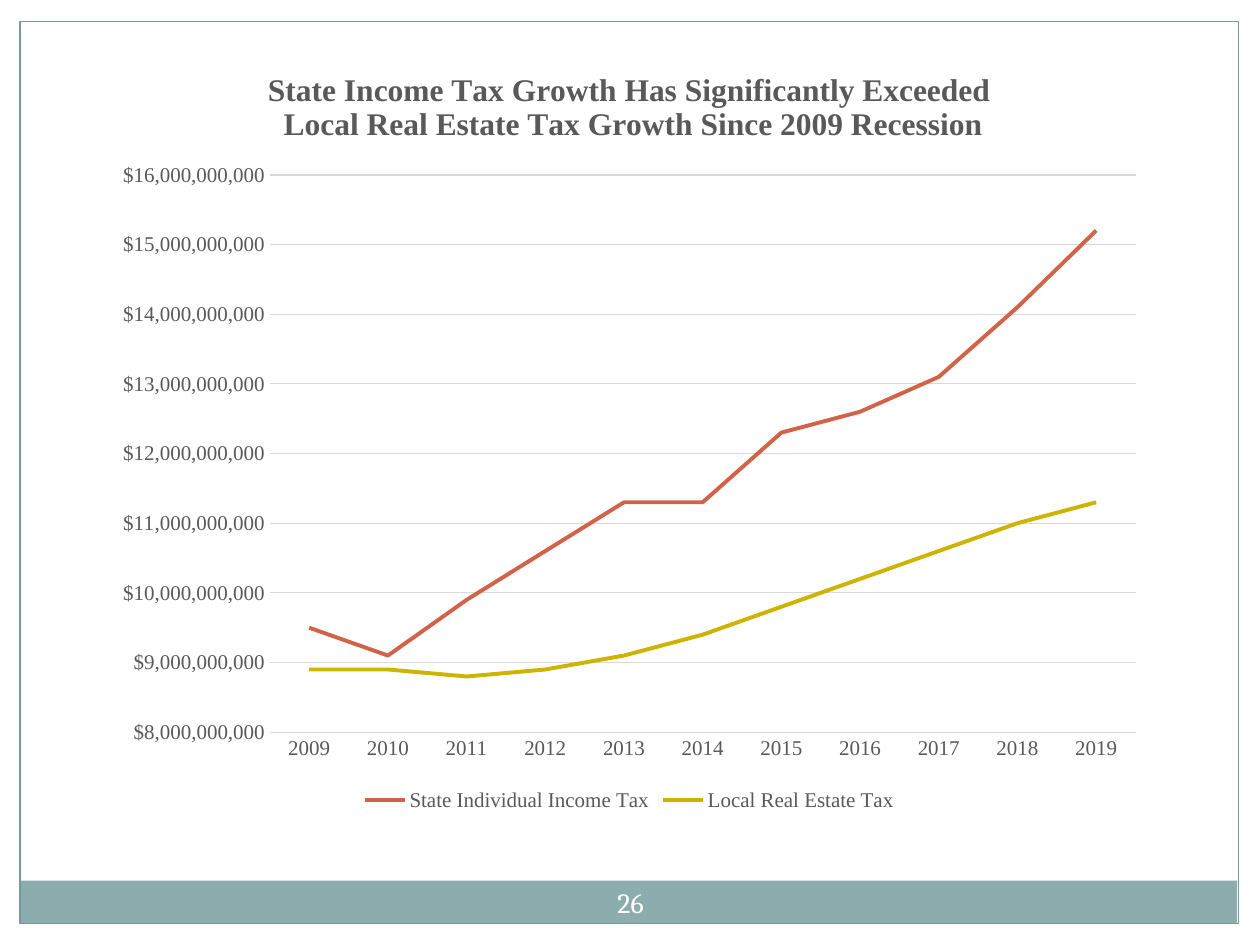
from pptx import Presentation
from pptx import util as u
from pptx.chart.data import CategoryChartData
from pptx.dml.color import RGBColor
from pptx.enum import chart as chart_enum, shapes, text

COLORS = {
    "band": "8CADAE",
    "frame": "7C999A",
    "white": "FFFFFF",
    "label": "595959",
    "grid": "D9D9D9",
    "income": "D16349",
    "estate": "CCB400",
}
CHART_FONT = "Times New Roman"


def style_font(font, name, size, color, bold=False):
    font.name = name
    font.size = u.Pt(size)
    font.bold = bold
    font.color.rgb = RGBColor.from_string(COLORS[color])


def style_line(line, color, width):
    line.color.rgb = RGBColor.from_string(COLORS[color])
    line.width = u.Pt(width)


presentation = Presentation()
presentation.slide_width = u.Inches(10)
presentation.slide_height = u.Inches(7.5)
slide = presentation.slides.add_slide(presentation.slide_layouts[6])

# White margins, footer band and slide frame
panels = [
    (0, 0, 10, 0.17, "white", None),
    (9.83, 0, 0.17, 7.5, "white", None),
    (0, 0, 0.17, 7.5, "white", None),
    (0.16, 6.99, 9.66, 0.34, "band", None),
    (0.16, 0.17, 9.67, 7.16, None, "frame"),
]
for left, top, width, height, fill_color, line_color in panels:
    panel = slide.shapes.add_shape(
        shapes.MSO_SHAPE.RECTANGLE,
        u.Inches(left), u.Inches(top), u.Inches(width), u.Inches(height))
    panel.shadow.inherit = False
    if fill_color:
        panel.fill.solid()
        panel.fill.fore_color.rgb = RGBColor.from_string(COLORS[fill_color])
    else:
        panel.fill.background()
    if line_color:
        style_line(panel.line, line_color, 0.75)
    else:
        panel.line.fill.background()

# Page number
number_box = slide.shapes.add_textbox(
    u.Inches(4.67), u.Inches(6.92), u.Inches(0.67), u.Inches(0.48))
number_frame = number_box.text_frame
number_frame.word_wrap = True
number_frame.vertical_anchor = text.MSO_ANCHOR.MIDDLE
number_frame.margin_left = number_frame.margin_right = u.Inches(0.05)
number_frame.margin_top = number_frame.margin_bottom = u.Inches(0.05)
paragraph = number_frame.paragraphs[0]
paragraph.alignment = text.PP_ALIGN.CENTER
run = paragraph.add_run()
run.text = "26"
style_font(run.font, "Cambria", 16, "white")

# Tax data, in billions of dollars
BILLION = 1_000_000_000
tax_series = [
    ("State Individual Income Tax", "income",
     [9.5, 9.1, 9.9, 10.6, 11.3, 11.3, 12.3, 12.6, 13.1, 14.1, 15.2]),
    ("Local Real Estate Tax", "estate",
     [8.9, 8.9, 8.8, 8.9, 9.1, 9.4, 9.8, 10.2, 10.6, 11.0, 11.3]),
]
chart_data = CategoryChartData(number_format='"$"#,##0')
chart_data.categories = [str(year) for year in range(2009, 2020)]
for name, color, billions in tax_series:
    chart_data.add_series(name, [round(value * BILLION) for value in billions])

# Line chart
chart = slide.shapes.add_chart(
    chart_enum.XL_CHART_TYPE.LINE, u.Inches(0.81), u.Inches(0.36),
    u.Inches(8.37), u.Inches(6.12), chart_data).chart
style_font(chart.font, CHART_FONT, 12, "label")
chart.plots[0].vary_by_categories = False
for series, (name, color, billions) in zip(chart.plots[0].series, tax_series):
    series.smooth = False
    series.marker.style = chart_enum.XL_MARKER_STYLE.NONE
    style_line(series.format.line, color, 2.25)

# Chart title
chart.has_title = True
title_frame = chart.chart_title.text_frame
title_lines = ["State Income Tax Growth Has Significantly Exceeded",
               " Local Real Estate Tax Growth Since 2009 Recession"]
for index, line in enumerate(title_lines):
    paragraph = title_frame.add_paragraph() if index else title_frame.paragraphs[0]
    run = paragraph.add_run()
    run.text = line
    style_font(run.font, CHART_FONT, 18, "label", bold=True)
chart.chart_title.include_in_layout = False

# Axes
for axis in (chart.category_axis, chart.value_axis):
    axis.major_tick_mark = chart_enum.XL_TICK_MARK.NONE
    axis.minor_tick_mark = chart_enum.XL_TICK_MARK.NONE
    style_font(axis.tick_labels.font, CHART_FONT, 12, "label")
style_line(chart.category_axis.format.line, "grid", 0.75)
value_axis = chart.value_axis
value_axis.minimum_scale = 8 * BILLION
value_axis.maximum_scale = 16 * BILLION
value_axis.major_unit = BILLION
value_axis.format.line.fill.background()
value_axis.has_major_gridlines = True
style_line(value_axis.major_gridlines.format.line, "grid", 0.75)
value_axis.tick_labels.number_format = '"$"#,##0'
value_axis.tick_labels.number_format_is_linked = False

# Legend
chart.has_legend = True
chart.legend.position = chart_enum.XL_LEGEND_POSITION.BOTTOM
chart.legend.include_in_layout = False
style_font(chart.legend.font, CHART_FONT, 12, "label")

presentation.save("out.pptx")
